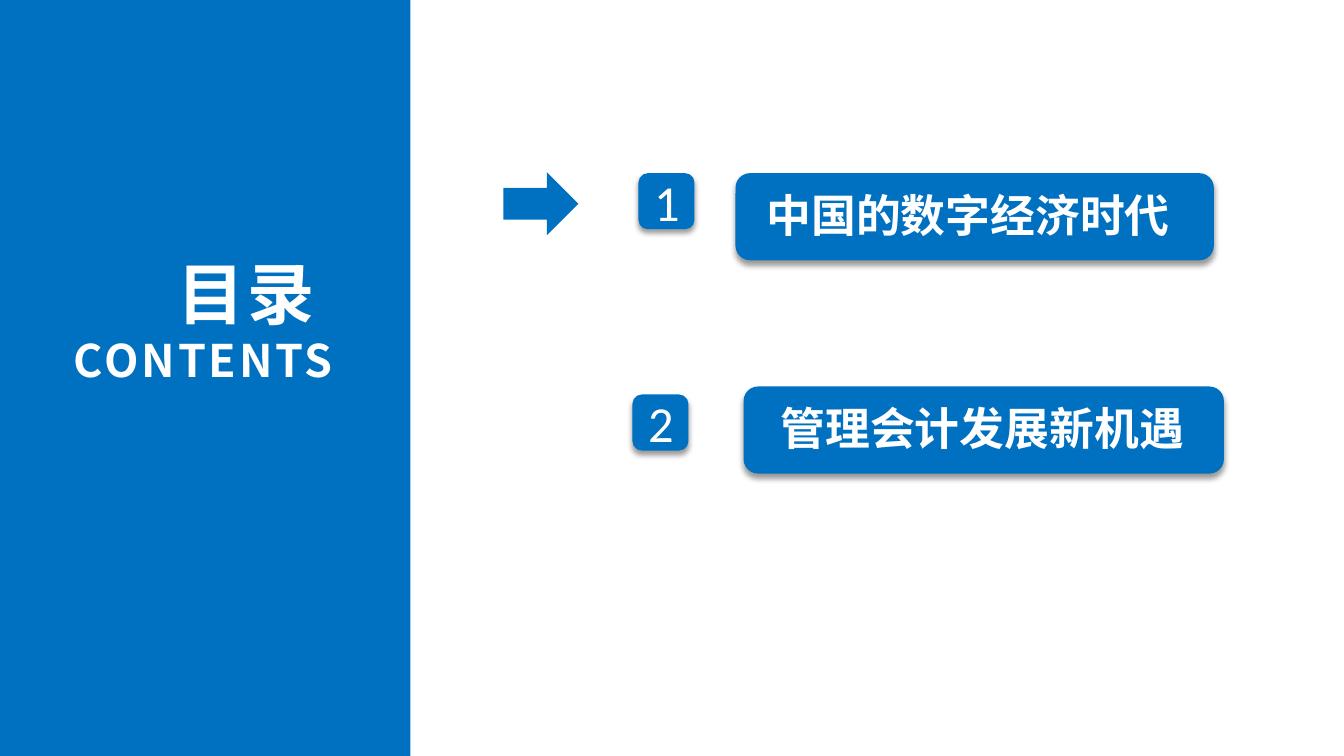
from lxml.etree import SubElement
from pptx import Presentation
from pptx.dml.color import RGBColor
from pptx.enum.shapes import MSO_SHAPE
from pptx.enum.text import MSO_ANCHOR, MSO_AUTO_SIZE, PP_ALIGN
from pptx.oxml.ns import qn
from pptx.util import Emu, Pt

PX = 9080  # EMU per px
COLORS = {"blue": "0070C0", "white": "FFFFFF", "shadow": "000000"}
CJK, LATIN = "Noto Sans CJK SC", "Calibri"


def px(*lengths):
    return [Emu(n * PX) for n in lengths]


def write(p, text, size, font=CJK, bold=False, align=PP_ALIGN.LEFT, spacing=0):
    """Add one formatted run to a paragraph."""
    p.alignment = align
    p.line_spacing = 1.0
    p.space_before = Pt(0)
    r = p.add_run()
    r.text = text
    r.font.size = Pt(size)
    r.font.bold = bold
    r.font.name = font
    r.font.color.rgb = RGBColor.from_string(COLORS["white"])
    rPr = r.font._element
    SubElement(rPr, qn("a:ea")).set("typeface", font)
    if spacing:
        rPr.set("spc", str(spacing * 100))


class ContentsSlide:
    def __init__(self, prs):
        self.s = prs.slides.add_slide(prs.slide_layouts[5])

    def frame(self, sp, anchor=MSO_ANCHOR.TOP):
        tf = sp.text_frame
        tf.word_wrap = True
        tf.auto_size = MSO_AUTO_SIZE.NONE
        tf.vertical_anchor = anchor
        tf.margin_left, tf.margin_right, tf.margin_top, tf.margin_bottom = px(13, 13, 7, 7)
        return tf

    def shape(self, kind, box, parent=None, shadow=False):
        sp = (parent or self.s).shapes.add_shape(kind, *px(*box))
        sp.fill.solid()
        sp.fill.fore_color.rgb = RGBColor.from_string(COLORS["blue"])
        sp.line.fill.background()
        sp.shadow.inherit = False
        if shadow:
            effects = sp.element.spPr.find(qn("a:effectLst"))
            outer = SubElement(effects, qn("a:outerShdw"), blurRad=str(Pt(4)),
                               dist=str(Pt(3)), dir="5400000", rotWithShape="0")
            color = SubElement(outer, qn("a:srgbClr"), val=COLORS["shadow"])
            SubElement(color, qn("a:alpha"), val="40000")
        return sp

    def title(self, box, lines):
        sp = self.s.shapes.title
        sp.left, sp.top, sp.width, sp.height = px(*box)
        tf = self.frame(sp)
        for i, (text, size) in enumerate(lines):
            p = tf.add_paragraph() if i else tf.paragraphs[0]
            write(p, text, size, bold=True, align=PP_ALIGN.RIGHT, spacing=2)

    def badge(self, number, x, y):
        sp = self.shape(MSO_SHAPE.ROUNDED_RECTANGLE, (x, y, 56, 56), shadow=True)
        tf = self.frame(sp, MSO_ANCHOR.MIDDLE)
        write(tf.paragraphs[0], number, 36, font=LATIN, align=PP_ALIGN.CENTER)

    def card(self, text, box, text_x):
        group = self.s.shapes.add_group_shape()
        self.shape(MSO_SHAPE.ROUNDED_RECTANGLE, box, parent=group, shadow=True)
        x, y, w, h = box
        tb = group.shapes.add_textbox(*px(text_x, y + 7, x + w - text_x, h - 14))
        write(self.frame(tb).paragraphs[0], text, 32, bold=True)


def main():
    prs = Presentation()
    prs.slide_width, prs.slide_height = px(1343, 755)
    page = ContentsSlide(prs)

    # Side panel, behind the title
    panel = page.shape(MSO_SHAPE.RECTANGLE, (0, 0, 410, 755))
    page.s.shapes.title.element.addprevious(panel.element)
    page.title((37, 245, 309, 149), [("目录 ", 48), ("CONTENTS", 32)])

    # Chapters
    page.badge("1", 638, 173)
    page.card("中国的数字经济时代", (735, 173, 478, 87), text_x=753)
    page.badge("2", 632, 394)
    page.card("管理会计发展新机遇", (743, 386, 480, 87), text_x=767)

    # Marker of the current chapter
    page.shape(MSO_SHAPE.RIGHT_ARROW, (503, 172, 75, 63))

    prs.save("out.pptx")


if __name__ == "__main__":
    main()
